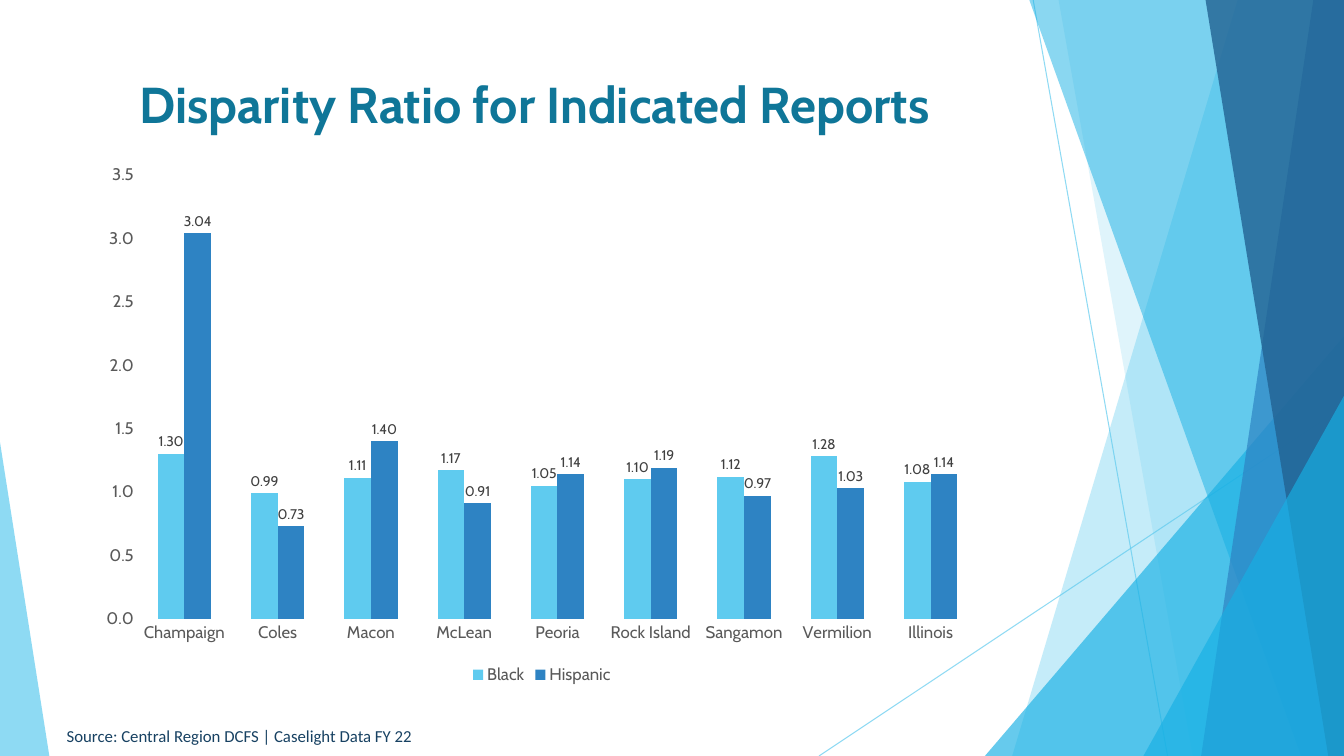
from lxml import etree
from pptx import Presentation
from pptx.chart.data import CategoryChartData
from pptx.dml.color import RGBColor
from pptx.enum.chart import XL_CHART_TYPE, XL_LABEL_POSITION, XL_LEGEND_POSITION, XL_TICK_MARK
from pptx.enum.shapes import MSO_CONNECTOR, MSO_SHAPE
from pptx.enum.text import MSO_ANCHOR, PP_ALIGN
from pptx.oxml.ns import qn
from pptx.util import Pt

PX = 9525
WIDTH, HEIGHT = 1280, 720
COLORS = {
    "sky": "5FCBEF", "cyan": "17B0E4", "blue": "2E83C3", "navy": "226292",
    "title": "0F7698", "source": "174162", "axis": "595959", "label": "404040",
}
STRAIGHT = MSO_CONNECTOR.STRAIGHT
TRIANGLE = MSO_SHAPE.ISOSCELES_TRIANGLE
COLUMNS = XL_CHART_TYPE.COLUMN_CLUSTERED
NO_TICK = XL_TICK_MARK.NONE
OUTSIDE_END = XL_LABEL_POSITION.OUTSIDE_END
LEGEND_BOTTOM = XL_LEGEND_POSITION.BOTTOM
MIDDLE, TOP = MSO_ANCHOR.MIDDLE, MSO_ANCHOR.TOP
CENTER, LEFT = PP_ALIGN.CENTER, PP_ALIGN.LEFT


def paint(fill, color, opacity):
    fill.solid()
    fill.fore_color.rgb = RGBColor.from_string(COLORS[color])
    for node in fill._xPr.iter(qn("a:srgbClr")):
        etree.SubElement(node, qn("a:alpha"), val=str(opacity * 1000))


def style_font(font, size, color, name="Cabin", bold=False):
    values = {"size": Pt(size), "name": name, "bold": bold}
    for attribute, value in values.items():
        setattr(font, attribute, value)
    font.color.rgb = RGBColor.from_string(COLORS[color])


presentation = Presentation()
presentation.slide_width = WIDTH * PX
presentation.slide_height = HEIGHT * PX
slide = presentation.slides.add_slide(presentation.slide_layouts[6])
shapes = slide.shapes

# Thin crossing lines
for ends in [(984, 0, 1112, 720), (1280, 387, 780, 720)]:
    connector = shapes.add_connector(STRAIGHT, *[end * PX for end in ends])
    connector.line.width = Pt(0.75)
    paint(connector.line.fill, "sky", 70)
    etree.SubElement(connector._element.spPr, qn("a:effectLst"))

# Translucent facets: bands run to the right edge, triangles stand on the bottom edge
facets = [
    ("band", (1179, 964), "sky", 36),
    ("band", (1008, 1136), "sky", 20),
    ("triangle", (938, 320, 342, 1), "cyan", 66),
    ("band", (980, 1239), "cyan", 50),
    ("band", (1251, 1144), "blue", 70),
    ("band", (1148, 1265), "navy", 80),
    ("triangle", (1089, 377, 191, 1), "cyan", 66),
    ("triangle", (0, 421, 47, 0), "sky", 70),
]
for kind, geometry, color, opacity in facets:
    if kind == "band":
        top_x, bottom_x = geometry
        builder = shapes.build_freeform(top_x, -1, scale=PX)
        builder.add_line_segments([(WIDTH, -1), (WIDTH, HEIGHT), (bottom_x, HEIGHT)], close=True)
        shape = builder.convert_to_shape()
    else:
        left, top, width, apex = geometry
        shape = shapes.add_shape(TRIANGLE, left * PX, top * PX, width * PX, (HEIGHT - top) * PX)
        shape.adjustments[0] = apex
    paint(shape.fill, color, opacity)
    shape.line.fill.background()
    shape.shadow.inherit = False

# Title and source
texts = [
    ("Disparity Ratio for Indicated Reports", (71, 64, 876, 68), MIDDLE, CENTER,
     {"size": 36, "color": "title", "bold": True}),
    ("Source: Central Region DCFS | Caselight Data FY 22", (54, 686, 361, 29), TOP, LEFT,
     {"size": 12, "color": "source", "name": "Calibri"}),
]
for text, box, anchor, alignment, font_format in texts:
    text_frame = shapes.add_textbox(*[length * PX for length in box]).text_frame
    text_frame.word_wrap = True
    text_frame.vertical_anchor = anchor
    paragraph = text_frame.paragraphs[0]
    paragraph.alignment = alignment
    run = paragraph.add_run()
    run.text = text
    style_font(run.font, **font_format)

# Chart
chart_data = CategoryChartData()
chart_data.categories = ["Champaign", "Coles", "Macon", "McLean", "Peoria",
                         "Rock Island", "Sangamon", "Vermilion", "Illinois"]
chart_data.add_series("Black", [1.30, 0.99, 1.11, 1.17, 1.05, 1.10, 1.12, 1.28, 1.08])
chart_data.add_series("Hispanic", [3.04, 0.73, 1.40, 0.91, 1.14, 1.19, 0.97, 1.03, 1.14])
chart_box = [length * PX for length in (84, 147, 864, 509)]
chart = shapes.add_chart(COLUMNS, *chart_box, chart_data).chart
chart.has_title = False
style_font(chart.font, 12, "axis")

# Axes
for axis in (chart.category_axis, chart.value_axis):
    axis.major_tick_mark = NO_TICK
    axis.minor_tick_mark = NO_TICK
    axis.has_major_gridlines = False
    axis.format.line.fill.background()
    style_font(axis.tick_labels.font, 12, "axis")
value_axis_format = {"minimum_scale": 0, "maximum_scale": 3.5, "major_unit": 0.5}
for attribute, value in value_axis_format.items():
    setattr(chart.value_axis, attribute, value)
chart.value_axis.tick_labels.number_format = "0.0"
chart.value_axis.tick_labels.number_format_is_linked = False

# Legend
chart.has_legend = True
chart.legend.position = LEGEND_BOTTOM
chart.legend.include_in_layout = False
style_font(chart.legend.font, 12, "axis")

# Columns and their values
plot = chart.plots[0]
plot.vary_by_categories = False
plot.gap_width = 150
plot.overlap = 0
label_format = {"show_value": True, "position": OUTSIDE_END,
                "number_format": "#,##0.00", "number_format_is_linked": False}
for series, color in zip(plot.series, ("sky", "blue")):
    series.format.fill.solid()
    series.format.fill.fore_color.rgb = RGBColor.from_string(COLORS[color])
    labels = series.data_labels
    for attribute, value in label_format.items():
        setattr(labels, attribute, value)
    style_font(labels.font, 10, "label")

presentation.save("out.pptx")
